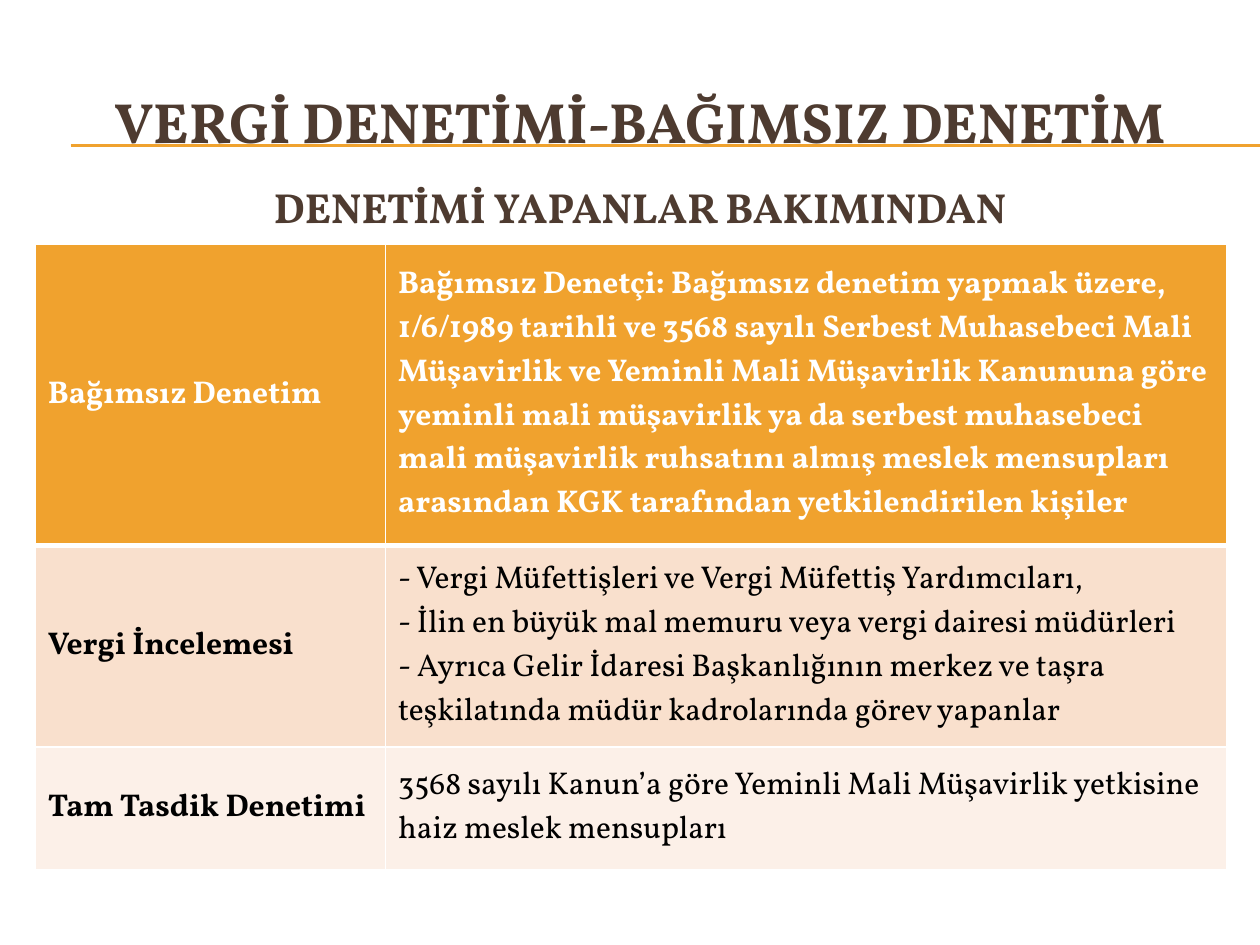
from dataclasses import dataclass

import pptx
import pptx.dml.color
import pptx.enum.shapes
import pptx.enum.text
import pptx.oxml
import pptx.oxml.ns
import pptx.util
from pptx.util import Inches

PP_ALIGN = pptx.enum.text.PP_ALIGN
MIDDLE = pptx.enum.text.MSO_ANCHOR.MIDDLE


@dataclass(frozen=True)
class Theme:
    font: str = "Vollkorn"
    heading: str = "4E3B30"
    accent: str = "F0A22E"
    band_dark: str = "F9E0CD"
    band_light: str = "FCF0E8"
    white: str = "FFFFFF"
    black: str = "000000"
    title_size: float = 32.4
    subtitle_size: float = 24
    table_size: float = 18


THEME = Theme()

# Each row: height, fill, text colour, audit type, auditor paragraphs, bold auditors
AUDIT_ROWS = [
    (2.39, THEME.accent, THEME.white, "Bağımsız Denetim",
     ["Bağımsız Denetçi: Bağımsız denetim yapmak üzere, 1/6/1989 tarihli ve 3568 "
      "sayılı Serbest Muhasebeci Mali Müşavirlik ve Yeminli Mali Müşavirlik Kanununa "
      "göre yeminli mali müşavirlik ya da serbest muhasebeci mali müşavirlik ruhsatını "
      "almış meslek mensupları arasından KGK tarafından yetkilendirilen kişiler"], True),
    (1.6, THEME.band_dark, THEME.black, "Vergi İncelemesi",
     ["- Vergi Müfettişleri ve Vergi Müfettiş Yardımcıları,",
      "- İlin en büyük mal memuru veya vergi dairesi müdürleri",
      "- Ayrıca Gelir İdaresi Başkanlığının merkez ve taşra teşkilatında müdür "
      "kadrolarında görev yapanlar"], False),
    (0.97, THEME.band_light, THEME.black, "Tam Tasdik Denetimi",
     ["3568 sayılı Kanun’a göre Yeminli Mali Müşavirlik yetkisine haiz meslek "
      "mensupları"], False),
]
COLUMN_WIDTHS = (2.78, 6.68)


def rgb(color):
    return pptx.dml.color.RGBColor.from_string(color)


def write_text(frame, paragraphs, *, size, color, bold=True, align=PP_ALIGN.LEFT):
    frame.word_wrap = True
    for index, text in enumerate(paragraphs):
        paragraph = frame.paragraphs[0] if index == 0 else frame.add_paragraph()
        paragraph.alignment = align
        run = paragraph.add_run()
        run.text = text
        run.font.name = THEME.font
        run.font.size = pptx.util.Pt(size)
        run.font.bold = bold
        run.font.color.rgb = rgb(color)


def add_rule(slide, y):
    rule = slide.shapes.add_connector(
        pptx.enum.shapes.MSO_CONNECTOR.STRAIGHT,
        Inches(0.56), Inches(y), Inches(10), Inches(y))
    rule.line.color.rgb = rgb(THEME.accent)
    rule.line.width = pptx.util.Pt(0.75)
    pptx.oxml.ns.qn("a:effectLst")
    rule.element.spPr.append(pptx.oxml.parse_xml(
        f"<a:effectLst {pptx.oxml.ns.nsdecls('a')}/>"))


def place_title(slide, text):
    title = slide.shapes.title
    title.left, title.top = Inches(0.33), Inches(0.5)
    title.width, title.height = Inches(9.5), Inches(0.92)
    title.text_frame.vertical_anchor = MIDDLE
    write_text(title.text_frame, [text], size=THEME.title_size,
               color=THEME.heading, align=PP_ALIGN.CENTER)


def add_subtitle(slide, text):
    subtitle = slide.shapes.add_textbox(
        Inches(0.33), Inches(1.39), Inches(9.5), Inches(0.55))
    write_text(subtitle.text_frame, [text], size=THEME.subtitle_size,
               color=THEME.heading, align=PP_ALIGN.CENTER)


def set_borders(cell, bottom_width):
    """Draw white borders; called before the fill, which must follow them in the XML."""
    properties = cell._tc.get_or_add_tcPr()
    for side, width in (("L", 1), ("R", 1), ("T", 1), ("B", bottom_width)):
        properties.append(pptx.oxml.parse_xml(
            f'<a:ln{side} {pptx.oxml.ns.nsdecls("a")} w="{pptx.util.Pt(width)}">'
            f'<a:solidFill><a:srgbClr val="{THEME.white}"/></a:solidFill>'
            f'</a:ln{side}>'))


def add_audit_table(slide):
    height = sum(row[0] for row in AUDIT_ROWS)
    table = slide.shapes.add_table(
        len(AUDIT_ROWS), len(COLUMN_WIDTHS), Inches(0.28), Inches(1.94),
        Inches(sum(COLUMN_WIDTHS)), Inches(height)).table
    for column, width in zip(table.columns, COLUMN_WIDTHS):
        column.width = Inches(width)
    for index, (row_height, fill, color, audit, auditors, bold) in enumerate(AUDIT_ROWS):
        table.rows[index].height = Inches(row_height)
        contents = (([audit], True), (auditors, bold))
        for cell, (paragraphs, is_bold) in zip(table.rows[index].cells, contents):
            set_borders(cell, bottom_width=3 if index == 0 else 1)
            cell.fill.solid()
            cell.fill.fore_color.rgb = rgb(fill)
            cell.vertical_anchor = MIDDLE
            write_text(cell.text_frame, paragraphs, size=THEME.table_size,
                       color=color, bold=is_bold)


def main():
    deck = pptx.Presentation()
    deck.slide_width, deck.slide_height = Inches(10), Inches(7.5)
    slide = deck.slides.add_slide(deck.slide_layouts.get_by_name("Title Only"))
    for y in (1.15, 1.16):
        add_rule(slide, y)
    place_title(slide, "VERGİ DENETİMİ-BAĞIMSIZ DENETİM")
    add_subtitle(slide, "DENETİMİ YAPANLAR BAKIMINDAN")
    add_audit_table(slide)
    deck.save("out.pptx")


if __name__ == "__main__":
    main()
